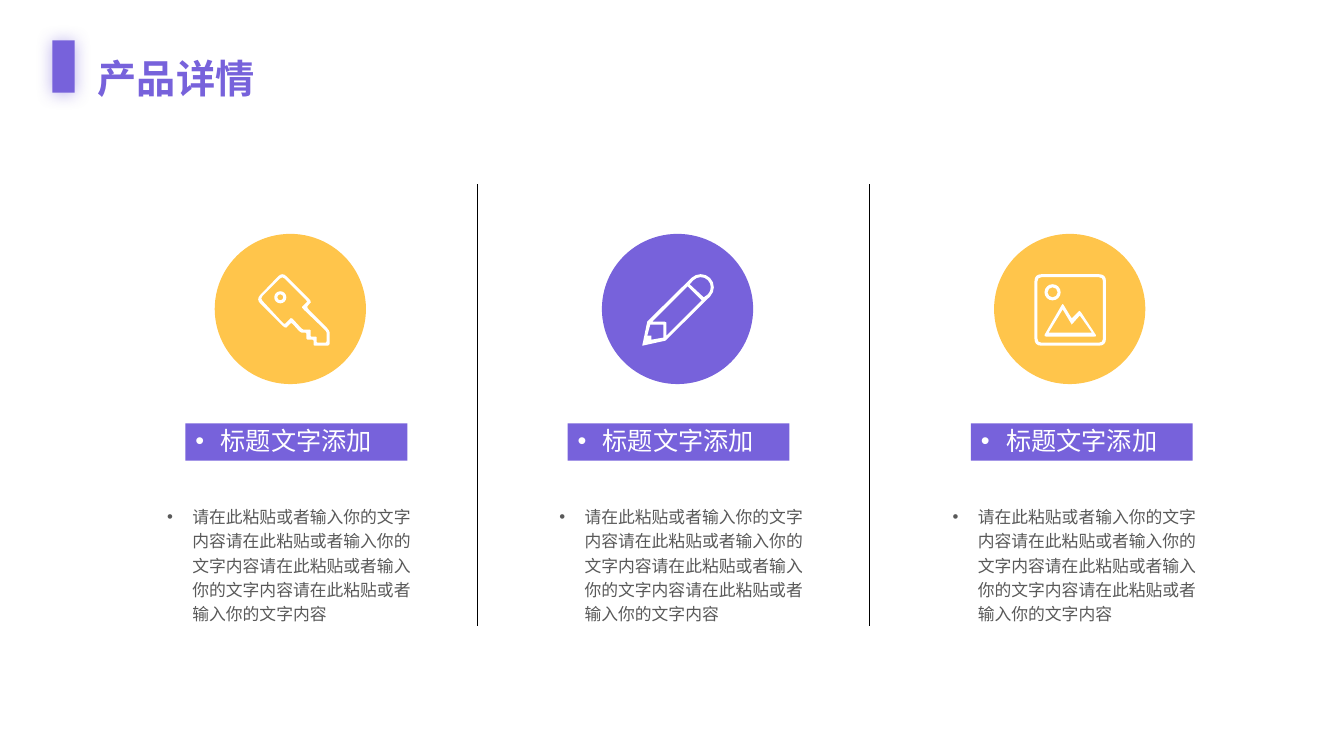
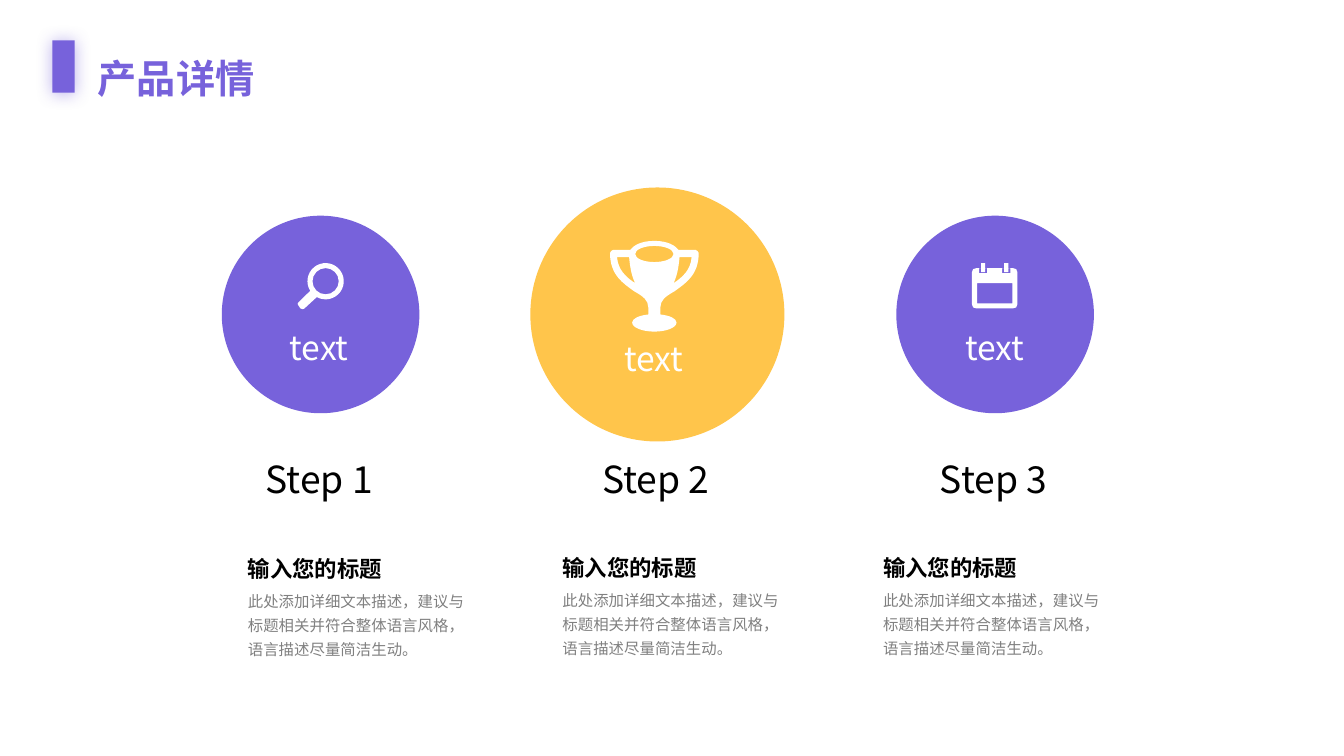
import math

from lxml import etree
from pptx import Presentation
from pptx.dml.color import RGBColor
from pptx.enum.shapes import MSO_CONNECTOR, MSO_SHAPE
from pptx.enum.text import MSO_ANCHOR, MSO_AUTO_SIZE, PP_ALIGN
from pptx.oxml.ns import qn
from pptx.util import Inches, Pt

RECTANGLE = MSO_SHAPE.RECTANGLE
OVAL = MSO_SHAPE.OVAL
STRAIGHT = MSO_CONNECTOR.STRAIGHT
TOP, MIDDLE = MSO_ANCHOR.TOP, MSO_ANCHOR.MIDDLE
GROW = MSO_AUTO_SIZE.SHAPE_TO_FIT_TEXT
NO_FIT = MSO_AUTO_SIZE.NONE
LEFT, CENTER, JUSTIFY = PP_ALIGN.LEFT, PP_ALIGN.CENTER, PP_ALIGN.JUSTIFY

PURPLE = RGBColor(0x77, 0x62, 0xDB)
YELLOW = RGBColor(0xFF, 0xC5, 0x4B)
WHITE = RGBColor(0xFF, 0xFF, 0xFF)
BLACK = RGBColor(0x00, 0x00, 0x00)
DARK_GRAY = RGBColor(0x59, 0x59, 0x59)
GRAY = RGBColor(0x80, 0x80, 0x80)
FONT = "Noto Sans CJK SC"
TITLE_ONLY = 5

TITLE = "产品详情"
PRODUCT_HEADING = "标题文字添加"
PRODUCT_TEXT = "请在此粘贴或者输入你的文字内容" * 4
STEP_HEADING = "输入您的标题"
STEP_TEXT = "此处添加详细文本描述，建议与标题相关并符合整体语言风格，语言描述尽量简洁生动。"


def segment_points(segment):
    return segment if isinstance(segment[0], tuple) else (segment,)


def between(start, end, share):
    return tuple(a + share * (b - a) for a, b in zip(start, end))


def arc(x, y, radius_x, radius_y, start=0, end=360, parts=4):
    step = math.radians(end - start) / parts
    handle = 4 / 3 * math.tan(step / 4)

    def at(angle, pull=0):
        return (x + radius_x * (math.cos(angle) - pull * math.sin(angle)),
                y + radius_y * (math.sin(angle) + pull * math.cos(angle)))

    angles = [math.radians(start) + step * i for i in range(parts + 1)]
    return [at(angles[0])] + [(at(a, handle), at(b, -handle), at(b))
                              for a, b in zip(angles, angles[1:])]


def circle(x, y, radius, start=0, end=360, parts=4):
    return arc(x, y, radius, radius, start, end, parts)


def box(left, top, right, bottom):
    return [(left, top), (right, top), (right, bottom), (left, bottom)]


def rounded(corners, share):
    contour = []
    for i, corner in enumerate(corners):
        start = between(corner, corners[i - 1], share)
        end = between(corner, corners[(i + 1) % len(corners)], share)
        contour += [start, (between(start, corner, 2 / 3), between(end, corner, 2 / 3), end)]
    return contour


def mirrored(contour, width):
    points = [segment_points(segment) for segment in contour]
    result = [points[-1][-1]]
    for previous, current in reversed(list(zip(points, points[1:]))):
        result.append(current[-2::-1] + previous[-1:] if len(current) > 1 else previous[-1])
    return [tuple((width - x, y) for x, y in segment) if isinstance(segment[0], tuple)
            else (width - segment[0], segment[1]) for segment in result]


def key_icon():
    outer = [(0.24, -0.02), (0.53, 0.27), (0.48, 0.33), (0.71, 0.56), (0.71, 0.71),
             (0.55, 0.71), (0.55, 0.65), (0.48, 0.65), (0.48, 0.58), (0.42, 0.58),
             (0.33, 0.48), (0.27, 0.54), (-0.02, 0.25)]
    inner = [(0.24, 0.02), (0.49, 0.27), (0.43, 0.33), (0.68, 0.57), (0.68, 0.68),
             (0.58, 0.68), (0.58, 0.62), (0.52, 0.62), (0.52, 0.55), (0.44, 0.55),
             (0.33, 0.43), (0.26, 0.5), (0.02, 0.24)]
    return [rounded(outer, 0.15), rounded(inner, 0.1),
            circle(0.22, 0.23, 0.06), circle(0.22, 0.23, 0.03)]


def pencil_icon():
    outer = [(0, 0.71), (0.05, 0.47)] + circle(0.58, 0.13, 0.13, -135, 45, 2) + [(0.23, 0.66)]
    eraser = circle(0.58, 0.13, 0.1, -135, 45, 2) + [(0.61, 0.23), (0.47, 0.1)]
    body = [(0.24, 0.61), (0.24, 0.48), (0.22, 0.47), (0.1, 0.47), (0.45, 0.12), (0.59, 0.26)]
    tip = [(0.21, 0.63), (0.09, 0.65), (0.09, 0.61), (0.05, 0.61), (0.08, 0.5), (0.21, 0.5)]
    return [outer, eraser, body, tip]


def landscape_icon():
    mountains = [(0.09, 0.62), (0.28, 0.29), (0.37, 0.44), (0.45, 0.36), (0.62, 0.62)]
    slopes = [(0.14, 0.58), (0.28, 0.35), (0.37, 0.5), (0.45, 0.41), (0.57, 0.58)]
    return [rounded(box(0, 0, 0.71, 0.71), 0.1), rounded(box(0.03, 0.03, 0.68, 0.68), 0.06),
            rounded(mountains, 0.06), slopes,
            circle(0.18, 0.18, 0.08), circle(0.18, 0.18, 0.05)]


def magnifier_icon():
    handle = [(0.07, 0.46), ((0.06, 0.47), (0.05, 0.47), (0.03, 0.46)),
              (0.01, 0.43), ((0, 0.42), (0, 0.41), (0.01, 0.4))]
    return [circle(0.28, 0.19, 0.18, 148, 479) + handle, circle(0.28, 0.19, 0.13)]


def trophy_icon():
    width = 0.88
    half = [(0.44, 0), ((0.58, 0), (0.65, 0.05), (0.68, 0.09)), (0.85, 0.09),
            ((0.86, 0.09), (0.88, 0.11), (0.88, 0.12)),
            ((0.88, 0.34), (0.75, 0.42), (0.64, 0.5)),
            ((0.55, 0.55), (0.5, 0.59), (0.5, 0.66)), (0.5, 0.73),
            ((0.59, 0.74), (0.66, 0.77), (0.66, 0.81)),
            ((0.66, 0.86), (0.56, 0.9), (0.44, 0.9))]
    handle = [(0.63, 0.42), ((0.66, 0.36), (0.68, 0.28), (0.69, 0.16)), (0.81, 0.16),
              ((0.8, 0.29), (0.72, 0.36), (0.63, 0.42))]
    return [half + mirrored(half, width)[1:], handle, mirrored(handle, width),
            arc(0.44, 0.13, 0.19, 0.08)]


def calendar_icon():
    contours = [rounded(box(0, 0.05, 0.45, 0.45), 0.1), box(0.05, 0.2, 0.4, 0.4)]
    for left in (0.07, 0.3):
        contours += [box(left, 0.05, left + 0.08, 0.1),
                     box(left + 0.02, 0, left + 0.06, 0.09)]
    return contours


def paint(shape, color):
    shape.shadow.inherit = False
    shape.fill.solid()
    shape.fill.fore_color.rgb = color
    shape.line.fill.background()


def add_filled(slide, kind, left, top, width, height, color):
    shape = slide.shapes.add_shape(kind, Inches(left), Inches(top),
                                   Inches(width), Inches(height))
    paint(shape, color)
    return shape


def bend_curves(shape, segments):
    outline = shape._element.spPr.find(".//" + qn("a:path"))
    lines = iter(outline.findall(qn("a:lnTo")))
    for segment in segments:
        curve = next(lines)
        if len(segment) == 3:
            curve.tag = qn("a:cubicBezTo")
            for extra in (next(lines), next(lines)):
                curve.append(extra[0])
                outline.remove(extra)


def add_icon(slide, left, top, contours):
    scaled = [[[(Inches(x), Inches(y)) for x, y in segment_points(segment)]
               for segment in contour] for contour in contours]
    builder = slide.shapes.build_freeform(*scaled[0][0][0])
    for i, (start, *segments) in enumerate(scaled):
        if i:
            builder.move_to(*start[0])
        builder.add_line_segments(sum(segments, []), close=True)
    shape = builder.convert_to_shape(Inches(left), Inches(top))
    bend_curves(shape, [segment for contour in scaled for segment in contour[1:]])
    paint(shape, WHITE)


def add_divider(slide, x, top, bottom):
    line = slide.shapes.add_connector(STRAIGHT, Inches(x), Inches(top),
                                      Inches(x), Inches(bottom))
    line.line.color.rgb = BLACK
    line.line.width = Pt(0.75)
    etree.SubElement(line._element.spPr, qn("a:effectLst"))


def write_text(shape, text, size, color, bold=False, align=LEFT, spacing=1.0,
               anchor=TOP, fit=GROW, bullet=False):
    frame = shape.text_frame
    frame.word_wrap = True
    frame.auto_size = fit
    frame.vertical_anchor = anchor
    paragraph = frame.paragraphs[0]
    paragraph.alignment = align
    paragraph.line_spacing = spacing
    if bullet:
        properties = paragraph._p.get_or_add_pPr()
        properties.set("marL", str(Inches(0.25)))
        properties.set("indent", str(Inches(-0.25)))
        etree.SubElement(properties, qn("a:buFont"), typeface="Arial")
        etree.SubElement(properties, qn("a:buChar"), char="•")
    run = paragraph.add_run()
    run.text = text
    run.font.size = Pt(size)
    run.font.bold = bold
    run.font.color.rgb = color
    run.font.name = FONT
    etree.SubElement(run._r.get_or_add_rPr(), qn("a:ea"), typeface=FONT)


def add_text(slide, left, top, width, height, text, size, color, **style):
    text_box = slide.shapes.add_textbox(Inches(left), Inches(top),
                                        Inches(width), Inches(height))
    write_text(text_box, text, size, color, **style)


def add_glow(shape, color):
    effects = shape._element.spPr.find(qn("a:effectLst"))
    shadow = etree.SubElement(effects, qn("a:outerShdw"), blurRad=str(Pt(12)),
                              dist=str(Pt(1)), dir="5400000", rotWithShape="0")
    tint = etree.SubElement(shadow, qn("a:srgbClr"), val=str(color))
    etree.SubElement(tint, qn("a:alpha"), val="50000")


def add_titled_slide(presentation):
    slide = presentation.slides.add_slide(presentation.slide_layouts[TITLE_ONLY])
    marker = add_filled(slide, RECTANGLE, 0.37, 0.55, 0.52, 0.22, PURPLE)
    marker.rotation = 90
    add_glow(marker, PURPLE)
    title = slide.shapes.title
    title.left, title.top = Inches(0.87), Inches(0.26)
    title.width, title.height = Inches(2.43), Inches(0.73)
    write_text(title, TITLE, 28, PURPLE, bold=True, align=JUSTIFY, spacing=1.5)
    return slide


def add_product(slide, circle_left, icon_left, heading_left, text_left, color, icon):
    add_filled(slide, OVAL, circle_left, 2.32, 1.5, 1.49, color)
    add_icon(slide, icon_left, 2.72, icon)
    heading = add_filled(slide, RECTANGLE, heading_left, 4.2, 2.2, 0.37, PURPLE)
    write_text(heading, PRODUCT_HEADING, 18, WHITE, spacing=0.9,
               anchor=MIDDLE, fit=NO_FIT, bullet=True)
    add_text(slide, text_left, 4.94, 2.76, 0.62, PRODUCT_TEXT, 12, DARK_GRAY,
             spacing=1.2, fit=NO_FIT, bullet=True)


def add_step(slide, number, center, diameter, color, icon_at, icon, label_at, text_at):
    add_filled(slide, OVAL, center - diameter / 2, 3.12 - diameter / 2,
               diameter, diameter, color)
    add_icon(slide, *icon_at, icon)
    add_text(slide, *label_at, 1.49, 0.5, "text", 24, WHITE, align=CENTER)
    add_text(slide, center - 1.54, 4.47, 3.05, 0.55, f"Step {number}",
             26.6, BLACK, align=CENTER, anchor=MIDDLE)
    left, top = text_at
    add_text(slide, left, top, 1.72, 0.37, STEP_HEADING, 16, BLACK, bold=True)
    add_text(slide, left, top + 0.31, 2.42, 0.82, STEP_TEXT, 11, GRAY, spacing=1.3)


def build_products(presentation):
    slide = add_titled_slide(presentation)
    for x in (4.74, 8.62):
        add_divider(slide, x, 1.83, 6.21)
    add_product(slide, 2.13, 2.56, 1.84, 1.56, YELLOW, key_icon())
    add_product(slide, 5.97, 6.37, 5.63, 5.45, PURPLE, pencil_icon())
    add_product(slide, 9.86, 10.26, 9.63, 9.35, YELLOW, landscape_icon())


def build_steps(presentation):
    slide = add_titled_slide(presentation)
    add_step(slide, 1, 3.18, 1.96, PURPLE, (2.95, 2.6), magnifier_icon(),
             (2.42, 3.19), (2.36, 5.46))
    add_step(slide, 2, 6.52, 2.52, YELLOW, (6.05, 2.39), trophy_icon(),
             (5.74, 3.3), (5.48, 5.45))
    add_step(slide, 3, 9.87, 1.96, PURPLE, (9.64, 2.61), calendar_icon(),
             (9.12, 3.19), (8.66, 5.45))


def main():
    presentation = Presentation()
    presentation.slide_width = Inches(13.33)
    presentation.slide_height = Inches(7.5)
    build_products(presentation)
    build_steps(presentation)
    presentation.save("out.pptx")


if __name__ == "__main__":
    main()
